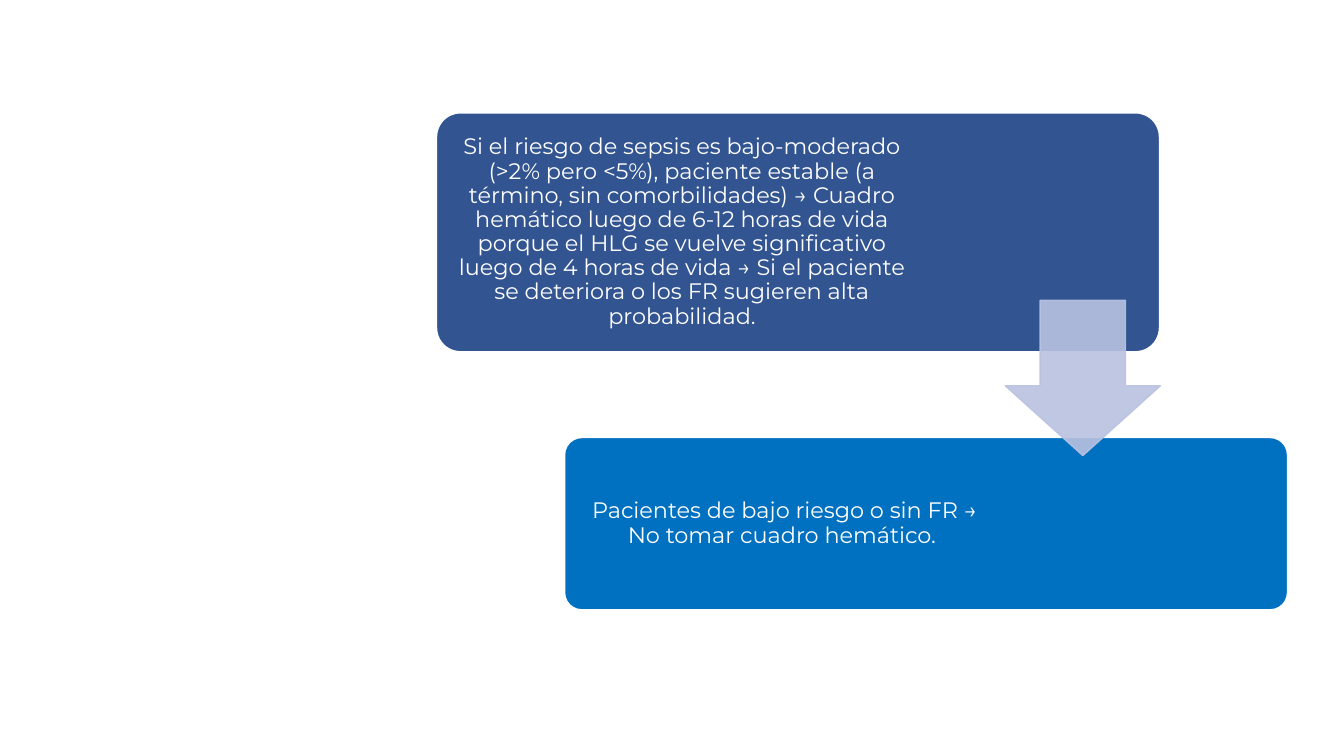
from dataclasses import dataclass

from lxml import etree
from pptx import Presentation
from pptx.dml.color import RGBColor
from pptx.enum.shapes import MSO_SHAPE
from pptx.enum.text import MSO_ANCHOR, PP_ALIGN
from pptx.oxml.ns import qn
from pptx.util import Inches, Pt

ROUNDED = MSO_SHAPE.ROUNDED_RECTANGLE
DOWN_ARROW = MSO_SHAPE.DOWN_ARROW
MIDDLE = MSO_ANCHOR.MIDDLE
CENTER = PP_ALIGN.CENTER


@dataclass(frozen=True)
class Theme:
    font: str = "Montserrat"
    text_size: Pt = Pt(16)
    space_after: Pt = Pt(5.6)
    outline: Pt = Pt(1)
    white: RGBColor = RGBColor(0xFF, 0xFF, 0xFF)
    navy: RGBColor = RGBColor(0x32, 0x54, 0x91)
    blue: RGBColor = RGBColor(0x00, 0x70, 0xC0)
    lavender: RGBColor = RGBColor(0xB9, 0xC2, 0xE1)
    arrow_opacity: int = 90


@dataclass(frozen=True)
class Step:
    text: str
    color: RGBColor
    left: float
    top: float
    height: float
    inset: float
    text_width: float


THEME = Theme()
CARD_WIDTH = 7.17
TEXT_MARGIN = Inches(0.07)
STEPS = [
    Step(
        "Si el riesgo de sepsis es bajo-moderado (>2% pero <5%), paciente estable "
        "(a término, sin comorbilidades) → Cuadro hemático luego de 6-12 horas de vida "
        "porque el HLG se vuelve significativo luego de 4 horas de vida → Si el paciente "
        "se deteriora o los FR sugieren alta probabilidad.",
        THEME.navy, 4.33, 1.12, 2.37, 0.07, 4.73,
    ),
    Step(
        "Pacientes de bajo riesgo o sin FR → No tomar cuadro hemático. ",
        THEME.blue, 5.6, 4.34, 1.71, 0.05, 4.27,
    ),
]


def paint(shape, fill: RGBColor, line: RGBColor) -> None:
    shape.shadow.inherit = False
    shape.fill.solid()
    shape.fill.fore_color.rgb = fill
    shape.line.color.rgb = line
    shape.line.width = THEME.outline


def set_opacity(shape, percent: int) -> None:
    for color in shape.fill._xPr.iter(qn("a:srgbClr")):
        etree.SubElement(color, qn("a:alpha"), val=str(percent * 1000))


def draw_step(slide, step: Step) -> None:
    card = slide.shapes.add_shape(
        ROUNDED, Inches(step.left), Inches(step.top), Inches(CARD_WIDTH), Inches(step.height)
    )
    card.adjustments[0] = 0.1
    paint(card, step.color, THEME.white)

    label = slide.shapes.add_textbox(
        Inches(step.left + step.inset), Inches(step.top + step.inset),
        Inches(step.text_width), Inches(step.height - 2 * step.inset),
    )
    frame = label.text_frame
    frame.word_wrap = True
    frame.vertical_anchor = MIDDLE
    frame.margin_left = frame.margin_right = TEXT_MARGIN
    frame.margin_top = frame.margin_bottom = TEXT_MARGIN
    paragraph = frame.paragraphs[0]
    paragraph.text = step.text
    paragraph.alignment = CENTER
    paragraph.line_spacing = 0.9
    paragraph.space_after = THEME.space_after
    paragraph.font.name = THEME.font
    paragraph.font.size = THEME.text_size
    paragraph.font.color.rgb = THEME.white


def draw_arrow(slide, left: float, top: float, side: float) -> None:
    arrow = slide.shapes.add_shape(
        DOWN_ARROW, Inches(left), Inches(top), Inches(side), Inches(side)
    )
    arrow.adjustments[0] = 0.55
    arrow.adjustments[1] = 0.45
    paint(arrow, THEME.lavender, THEME.lavender)
    set_opacity(arrow, THEME.arrow_opacity)


def main() -> None:
    deck = Presentation()
    deck.slide_width = Inches(13.33)
    deck.slide_height = Inches(7.5)
    slide = deck.slides.add_slide(deck.slide_layouts.get_by_name("Blank"))
    for step in STEPS:
        draw_step(slide, step)
    draw_arrow(slide, 9.97, 2.98, 1.54)
    deck.save("out.pptx")


if __name__ == "__main__":
    main()
